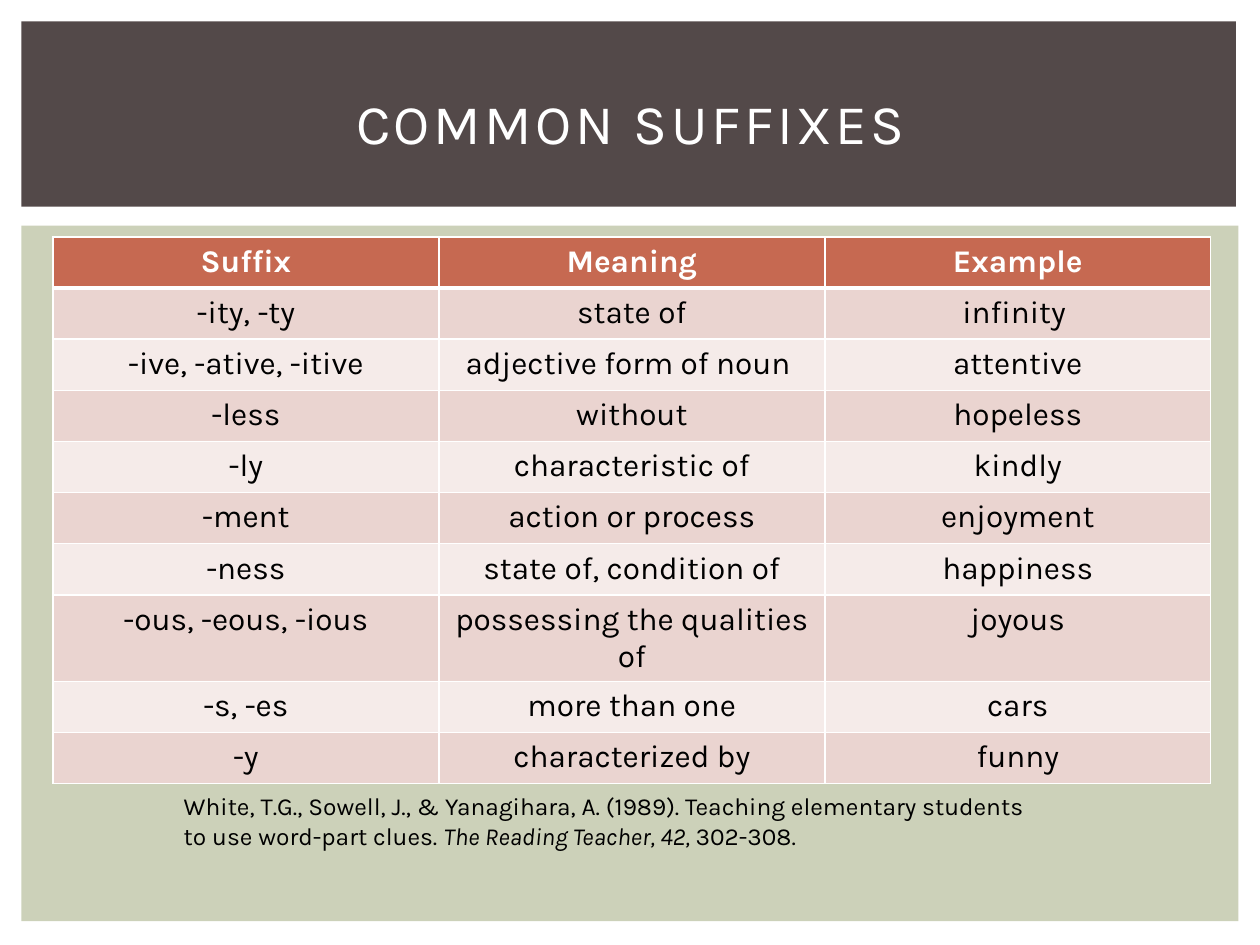
from lxml.etree import SubElement
from pptx import Presentation
from pptx.dml.color import RGBColor
from pptx.enum.shapes import MSO_SHAPE
from pptx.enum.text import MSO_ANCHOR, PP_ALIGN
from pptx.oxml.ns import qn
from pptx.util import Inches, Pt

ROWS = [
    ("Suffix", "Meaning", "Example"),
    ("-ity, -ty", "state of", "infinity "),
    ("-ive, -ative, -itive", "adjective form of noun ", "attentive"),
    ("-less", "without", "hopeless"),
    ("-ly", "characteristic of", "kindly"),
    ("-ment", "action or process", "enjoyment"),
    ("-ness", "state of, condition of", "happiness"),
    ("-ous, -eous, -ious", "possessing the qualities of", "joyous"),
    ("-s, -es", "more than one", "cars"),
    ("-y", "characterized by", "funny"),
]
SOURCE = [
    ("White, T.G., Sowell, J., & Yanagihara, A. (1989). Teaching elementary "
     "students to use word-part clues. ", False),
    ("The Reading Teacher, 42, ", True),
    ("302-308.", False),
]


def color(code):
    return RGBColor.from_string(code)


class Deck:
    font = "Karla"
    white, black = "FFFFFF", "000000"
    dark, green, head = "534949", "CCD1B9", "C66951"
    bands = "F5EBE9", "EAD4D0"

    def __init__(self):
        self.prs = Presentation()
        self.prs.slide_width, self.prs.slide_height = Inches(10), Inches(7.5)
        self.slide = self.prs.slides.add_slide(self.prs.slide_layouts[6])

    def panel(self, box, fill):
        shape = self.slide.shapes.add_shape(MSO_SHAPE.RECTANGLE, *map(Inches, box))
        shape.shadow.inherit = False
        shape.fill.solid()
        shape.fill.fore_color.rgb = color(fill)
        shape.line.fill.background()

    def run(self, para, text, size, ink, bold=False, italic=False):
        run = para.add_run()
        run.text = text
        font = run.font
        font.name, font.size = self.font, Pt(size)
        font.bold, font.italic = bold, italic
        font.color.rgb = color(ink)
        return run

    def text(self, box, anchor=MSO_ANCHOR.TOP):
        """Add a wrapping text box and return its first paragraph."""
        frame = self.slide.shapes.add_textbox(*map(Inches, box)).text_frame
        frame.word_wrap = True
        frame.vertical_anchor = anchor
        return frame.paragraphs[0]

    def title(self, box, text):
        para = self.text(box, MSO_ANCHOR.MIDDLE)
        para.alignment = PP_ALIGN.CENTER
        run = self.run(para, text, 32, self.white)
        run.font._element.set("spc", "200")

    def cite(self, box, parts):
        para = self.text(box)
        for text, italic in parts:
            self.run(para, text, 14, self.black, italic=italic)

    def border(self, cell, side, width):
        props = cell._tc.get_or_add_tcPr()
        line = SubElement(props, qn(f"a:ln{side}"), w=str(Pt(width)))
        fill = SubElement(line, qn("a:solidFill"))
        SubElement(fill, qn("a:srgbClr"), val=self.white)

    def table(self, box, rows):
        table = self.slide.shapes.add_table(
            len(rows), len(rows[0]), *map(Inches, box)).table
        for r, row in enumerate(rows):
            top = r == 0
            for c, text in enumerate(row):
                cell = table.cell(r, c)
                for side in "LRTB":
                    thick = (top and side == "B") or (r == 1 and side == "T")
                    self.border(cell, side, 3 if thick else 1)
                cell.fill.solid()
                cell.fill.fore_color.rgb = color(self.head if top else self.bands[r % 2])
                para = cell.text_frame.paragraphs[0]
                para.alignment = PP_ALIGN.CENTER
                self.run(para, text, 18, self.white if top else self.black, bold=top)


def main():
    deck = Deck()
    deck.panel((0.17, 1.79, 9.66, 5.52), deck.green)
    deck.panel((0.17, 0.17, 9.64, 1.47), deck.dark)
    deck.table((0.42, 1.88, 9.19, 4.06), ROWS)
    deck.title((0.42, 0.39, 9.17, 1.15), "COMMON SUFFIXES")
    deck.cite((1.36, 6.23, 6.98, 0.57), SOURCE)
    deck.prs.save("out.pptx")


if __name__ == "__main__":
    main()
